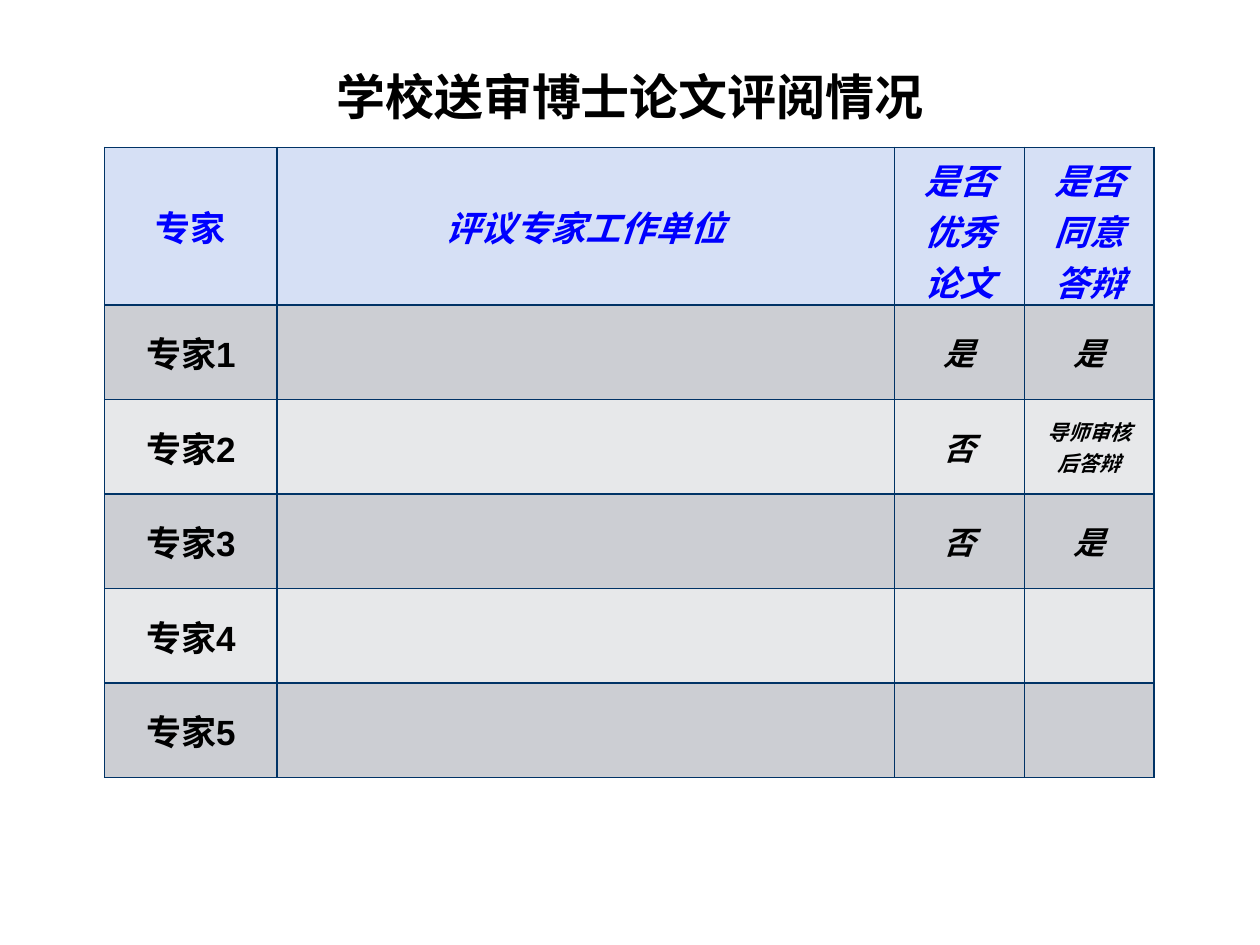
from dataclasses import dataclass

from lxml.etree import SubElement
from pptx import Presentation
from pptx.dml.color import RGBColor
from pptx.enum.text import MSO_ANCHOR, PP_ALIGN
from pptx.oxml.ns import qn
from pptx.util import Inches, Pt


@dataclass(frozen=True)
class Theme:
    cjk: str = "Noto Sans CJK SC"
    latin: str = "Arial"
    text: str = "000000"
    header_text: str = "0000FF"
    header_fill: str = "D6E0F5"
    bands: tuple = ("CCCED3", "E7E8EA")
    border: str = "003366"
    title_size: int = 28
    label_size: int = 20
    answer_size: int = 18
    note_size: int = 12


class SlideBuilder:
    def __init__(self, slide, theme):
        self.s = slide
        self.theme = theme

    def set_text(self, tf, text, size, color, font=None, italic=False):
        tf.text = text
        p = tf.paragraphs[0]
        p.alignment = PP_ALIGN.CENTER
        for r in p.runs:
            f = r.font
            f.name = font or self.theme.cjk
            f.size, f.bold, f.italic = Pt(size), True, italic
            f.color.rgb = RGBColor.from_string(color)
            SubElement(r._r.get_or_add_rPr(), qn("a:ea"), typeface=self.theme.cjk)
        return p

    def title(self, text, left, top, width, height):
        sp = self.s.shapes.add_textbox(
            Inches(left), Inches(top), Inches(width), Inches(height))
        tf = sp.text_frame
        tf.word_wrap = True
        tf.vertical_anchor = MSO_ANCHOR.MIDDLE
        self.set_text(tf, text, self.theme.title_size, self.theme.text)

    def border(self, cell):
        tcPr = cell._tc.get_or_add_tcPr()
        for i, side in enumerate(("lnL", "lnR", "lnT", "lnB")):
            ln = tcPr.makeelement(qn(f"a:{side}"), {"w": str(Pt(1))})
            fill = SubElement(ln, qn("a:solidFill"))
            SubElement(fill, qn("a:srgbClr"), val=self.theme.border)
            tcPr.insert(i, ln)

    def fill_cell(self, cell, row, col, text):
        t = self.theme
        cell.vertical_anchor = MSO_ANCHOR.MIDDLE
        cell.fill.solid()
        fill = t.header_fill if row == 0 else t.bands[(row - 1) % 2]
        cell.fill.fore_color.rgb = RGBColor.from_string(fill)
        self.border(cell)
        if not text:
            return
        tf = cell.text_frame
        if row == 0:
            p = self.set_text(tf, text, t.label_size, t.header_text, italic=col > 0)
            p.space_before = Pt(0.2 * t.label_size)
        elif col == 0:
            self.set_text(tf, text, t.label_size, t.text, t.latin)
        else:
            size = t.answer_size if len(text) == 1 else t.note_size
            self.set_text(tf, text, size, t.text, italic=True)

    def table(self, rows, left, top, widths, heights):
        frame = self.s.shapes.add_table(
            len(rows), len(widths), Inches(left), Inches(top),
            Inches(sum(widths)), Inches(sum(heights)))
        table = frame.table
        for column, width in zip(table.columns, widths):
            column.width = Inches(width)
        for row, height in zip(table.rows, heights):
            row.height = Inches(height)
        for i, row in enumerate(rows):
            for j, text in enumerate(row):
                self.fill_cell(table.cell(i, j), i, j, text)


def main():
    prs = Presentation()
    prs.slide_width, prs.slide_height = Inches(10), Inches(7.5)
    slide = SlideBuilder(prs.slides.add_slide(prs.slide_layouts[6]), Theme())

    slide.title("学校送审博士论文评阅情况", 0.5, 0.48, 9, 0.57)

    header = ("专家", "评议专家工作单位", "是否优秀论文", "是否同意答辩")
    reviews = [("是", "是"), ("否", "导师审核后答辩"), ("否", "是"), ("", ""), ("", "")]
    rows = [header] + [
        (f"专家{n}", "", excellent, defend)
        for n, (excellent, defend) in enumerate(reviews, 1)]
    slide.table(rows, 0.83, 1.17, widths=[1.37, 4.9, 1.03, 1.03],
                heights=[1.25] + [0.75] * len(reviews))

    prs.save("out.pptx")


if __name__ == "__main__":
    main()
